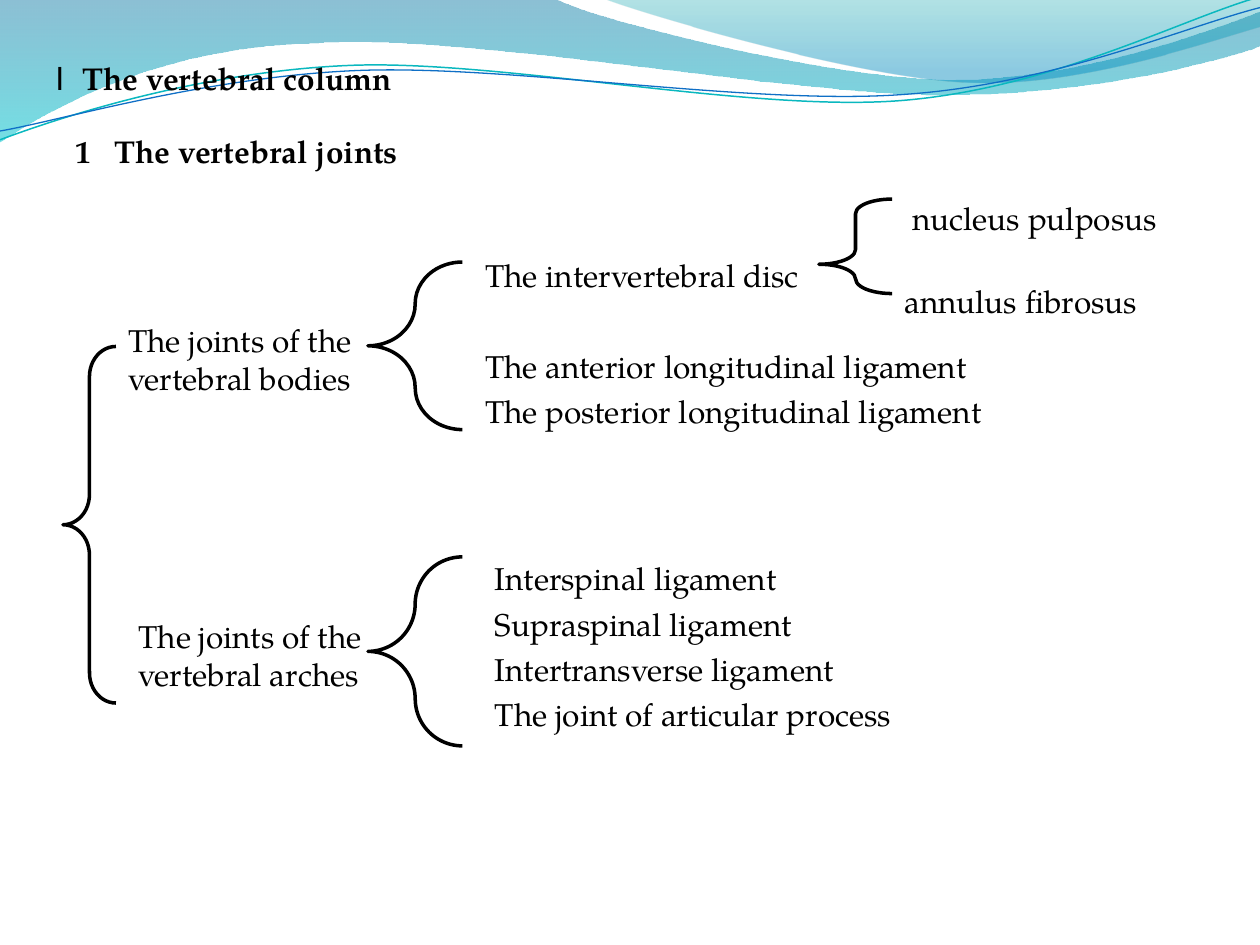
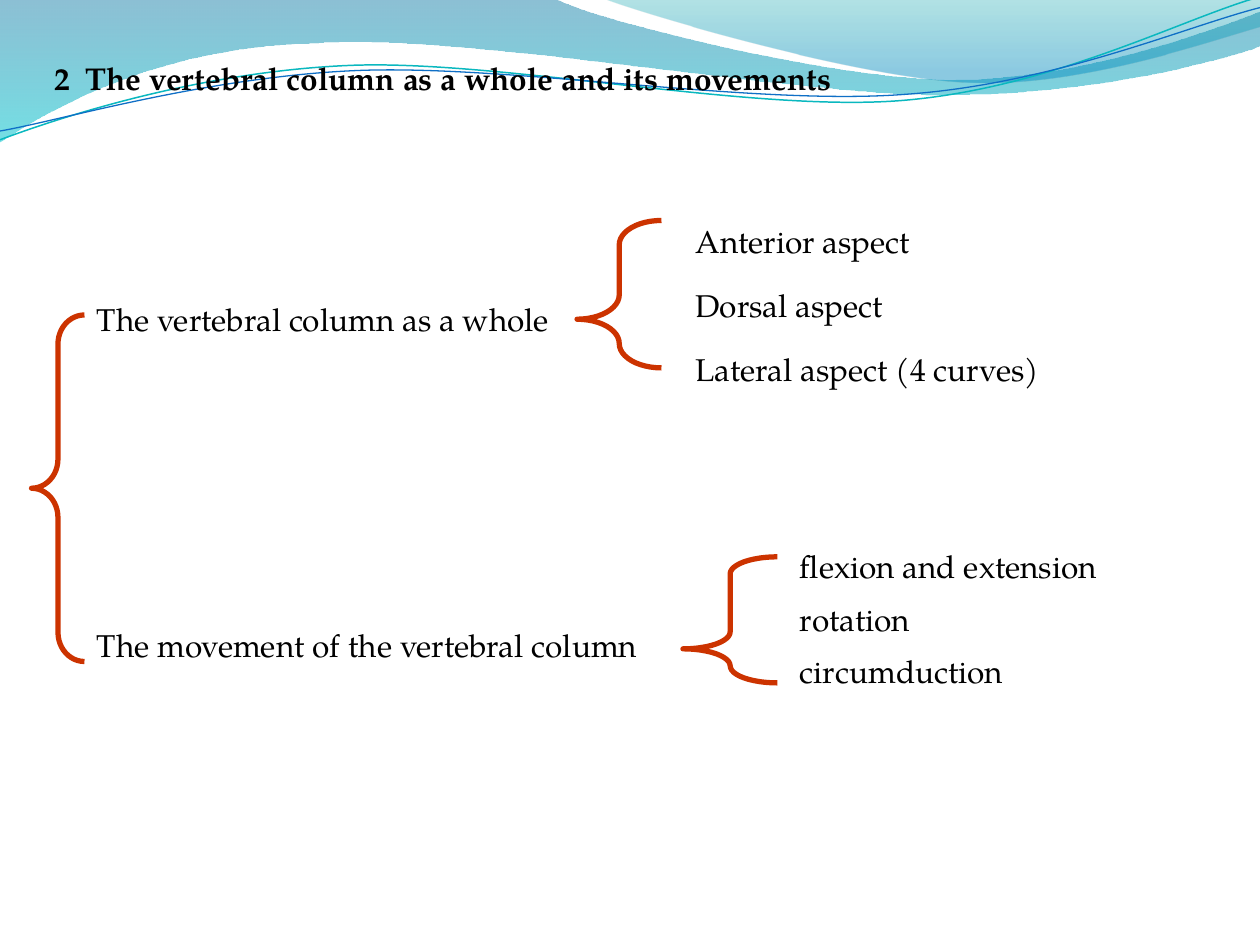
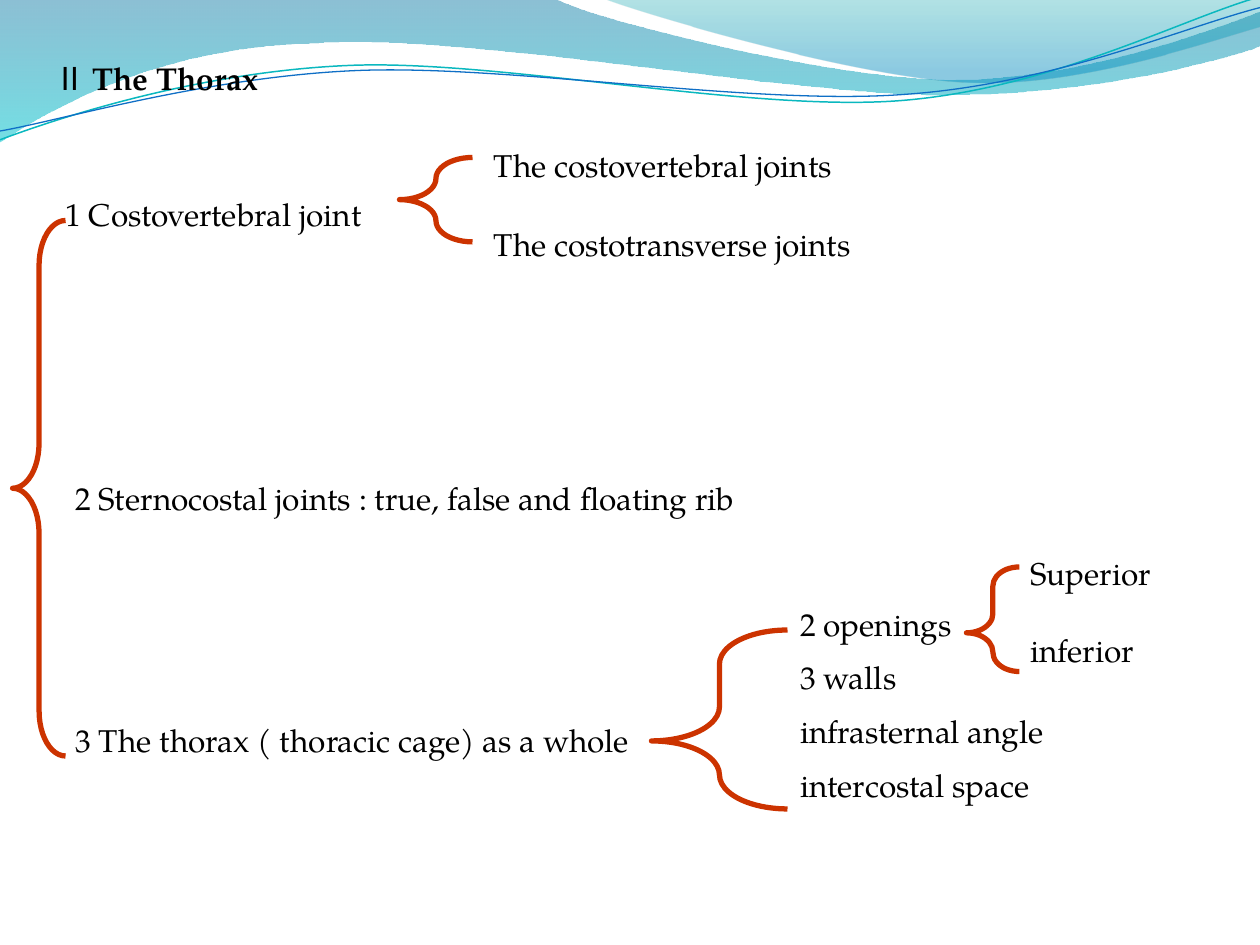
import math

import pptx
import pptx.util
import pptx.dml.color
import pptx.enum.shapes
import pptx.enum.text
import pptx.oxml.ns
from lxml import etree

Inches = pptx.util.Inches
Pt = pptx.util.Pt
RGBColor = pptx.dml.color.RGBColor
qn = pptx.oxml.ns.qn
LEFT = pptx.enum.text.PP_ALIGN.LEFT
JUSTIFY = pptx.enum.text.PP_ALIGN.JUSTIFY

BLACK = RGBColor(0x00, 0x00, 0x00)
RED = RGBColor(0xCC, 0x33, 0x00)
DEEP_BLUE = RGBColor(0x00, 0x74, 0xA1)
AQUA = RGBColor(0x00, 0xC6, 0xCF)
TEAL = RGBColor(0x00, 0xA1, 0xA9)
SKY = RGBColor(0x00, 0x8B, 0xBF)
TEAL_LINE = RGBColor(0x0A, 0xB8, 0xBF)
BLUE_LINE = RGBColor(0x0F, 0x6F, 0xC6)
SERIF = "TeX Gyre Pagella"
CJK = "Noto Sans CJK SC"
LINE_TILT = 2.7

# Waves at the top: frame, outline, then gradient stops (position, colour, alpha) or a line.
# Six numbers are a Bezier curve, two are a straight line.
WAVES = [
    dict(at=(-0.01, -0.01, 10.02, 1.14), start=(0, 0), segments=[
        (4.4, -0.01), (4.76, 0.17, 6.64, 0.63, 7.58, 0.63),
        (8.53, 0.63, 9.58, 0.26, 10, 0.09), (10.01, 0.36),
        (9.83, 0.44, 8.7, 0.76, 7.46, 0.75), (6.22, 0.75, 3.82, 0.28, 2.57, 0.34),
        (1.29, 0.36, 0.46, 0.83, -0.01, 1.13), (0, 0)],
        stops=[(0, DEEP_BLUE, 45), (1, AQUA, 55)]),
    dict(at=(4.79, -0.01, 5.21, 0.7), start=(4.79, -0.01), segments=[
        (5.09, 0.11, 6.82, 0.62, 7.69, 0.65), (8.56, 0.69, 9.61, 0.32, 10, 0.21),
        (10, 0), (4.79, -0.01)],
        stops=[(0, TEAL, 30), (0.8, SKY, 45)]),
    dict(at=(-0.02, 0.22, 10.02, 0.71), start=(0, 1.11), segments=[
        (0.48, 0.93, 1.58, 0.57, 2.77, 0.52), (3.95, 0.47, 5.93, 0.89, 7.13, 0.8),
        (8.33, 0.71, 9.38, 0.15, 9.98, -0.02)],
        line=(TEAL_LINE, 0.85)),
    dict(at=(-0.02, 0.3, 10.03, 0.58), start=(0, 1.04), segments=[
        (0.47, 0.96, 1.64, 0.61, 2.83, 0.56), (4.03, 0.51, 5.97, 0.84, 7.17, 0.75),
        (8.36, 0.67, 9.41, 0.21, 10, 0.06)],
        line=(BLUE_LINE, 0.75)),
]

# The first text of each slide goes in the body placeholder.
# Braces are (left, top, width, height), curl, position of the point.
SLIDES = [
    dict(title=("Ⅰ ", "The vertebral column"), title_at=(0.25, 0.42, 6.33, 0.5),
         brace_line=(BLACK, 2),
         texts=[
             dict(at=(3.75, 1.92, 5.08, 2.5), spacing=1.2, gaps=(0, 26, 0),
                  lines=["The intervertebral disc",
                         "The anterior longitudinal ligament ",
                         "The posterior longitudinal ligament "]),
             dict(at=(0.5, 1, 3.83, 0.5), bold=True, lines=["1   The vertebral joints"]),
             dict(at=(0.92, 2.5, 2.83, 0.9),
                  lines=["The joints of the", "vertebral bodies"]),
             dict(at=(1, 4.85, 2.75, 0.9),
                  lines=["The joints of the", "vertebral arches"]),
             dict(at=(7.08, 1.17, 2.67, 1.86), spacing=2.2,
                  lines=[" nucleus pulposus annulus fibrosus"]),
             dict(at=(3.83, 4.33, 5, 2.02), spacing=1.2,
                  lines=["Interspinal ligament ", "Supraspinal ligament",
                         "Intertransverse ligament",
                         "The joint of articular process"]),
         ],
         braces=[((2.92, 2.08, 0.75, 1.33), 0.44, 0.5),
                 ((6.5, 1.58, 0.58, 0.75), 0.32, 0.69),
                 ((2.92, 4.42, 0.75, 1.5), 0.5, 0.5),
                 ((0.5, 2.75, 0.42, 2.83), 0.57, 0.5)]),
    dict(title=("", "2  The vertebral column as a whole and its movements"),
         title_at=(0.33, 0.42, 9.5, 0.5), brace_line=(RED, 3),
         texts=[
             dict(at=(5.42, 1.5, 3.92, 2.14), spacing=1.7, align=JUSTIFY,
                  lines=["Anterior aspect ", "Dorsal aspect ",
                         "Lateral aspect (4 curves)"]),
             dict(at=(0.67, 2.33, 5.08, 0.5), lines=["The vertebral column as a whole"]),
             dict(at=(0.67, 4.92, 6.67, 0.5),
                  lines=["The movement of the vertebral column"]),
             dict(at=(6.25, 4.17, 3.08, 1.78), spacing=1.4,
                  lines=["flexion and extension", "rotation", "circumduction"]),
         ],
         braces=[((4.58, 1.75, 0.67, 1.17), 0.44, 0.67),
                 ((5.42, 4.42, 0.75, 1), 0.44, 0.73),
                 ((0.25, 2.5, 0.42, 2.75), 0.55, 0.5)]),
    dict(title=("Ⅱ ", "The Thorax"), title_at=(0.33, 0.42, 3.83, 0.5),
         brace_line=(RED, 3),
         texts=[
             dict(at=(6.25, 4.75, 2.83, 2.3), gaps=(0, 9, 9, 9),
                  lines=["2 openings", "3 walls", "infrasternal angle",
                         "intercostal space"]),
             dict(at=(0.42, 1.5, 3.67, 0.5), lines=["1 Costovertebral joint"]),
             dict(at=(3.67, 0.78, 5.58, 1.78), spacing=2.1, indent=0.15, align=JUSTIFY,
                  lines=["The costovertebral joints ", "The costotransverse joints "]),
             dict(at=(0.5, 3.75, 7.67, 0.5),
                  lines=["2 Sternocostal joints : true, false and floating rib"]),
             dict(at=(0.5, 5.67, 5.67, 0.5),
                  lines=["3 The thorax ( thoracic cage) as a whole"]),
             dict(at=(8.08, 4.17, 1.83, 1.58), spacing=1.6, gaps=(0, 9),
                  lines=["Superior", "inferior"]),
         ],
         braces=[((0.1, 1.75, 0.42, 4.25), 0.85, 0.5),
                 ((3.17, 1.25, 0.58, 0.67), 0.36, 0.5),
                 ((5.17, 5, 1.08, 1.42), 0.48, 0.62),
                 ((7.67, 4.5, 0.42, 0.83), 0.36, 0.63)]),
]


def add_run(p, text, font=SERIF, bold=False):
    r = p.add_run()
    r.text = text
    for name, value in dict(name=font, size=Pt(18), bold=bold).items():
        setattr(r.font, name, value)
    r.font.color.rgb = BLACK
    etree.SubElement(r.font._element, qn("a:ea")).set("typeface", font)


def place_text(sp, at):
    sp.left, sp.top, sp.width, sp.height = map(Inches, at)
    tf = sp.text_frame
    frame = dict(word_wrap=True, vertical_anchor=pptx.enum.text.MSO_ANCHOR.TOP,
                 auto_size=pptx.enum.text.MSO_AUTO_SIZE.SHAPE_TO_FIT_TEXT)
    for name, value in frame.items():
        setattr(tf, name, value)
    return tf


prs = pptx.Presentation()
prs.slide_width, prs.slide_height = Inches(10), Inches(7.5)
slides = [prs.slides.add_slide(prs.slide_layouts[1]) for _ in SLIDES]

# Shared waves: drawn once, then moved to the master
master_tree = prs.slide_master.shapes._spTree
for i, wave in enumerate(WAVES):
    left, top, width, height = wave["at"]
    closed = "stops" in wave
    builder = slides[0].shapes.build_freeform(Inches(left), Inches(top))
    builder.add_line_segments([(Inches(left + width), Inches(top)),
                               (Inches(left + width), Inches(top + height))])
    sp = builder.convert_to_shape()
    sp.shadow.inherit = False

    # Curved outline, with the tilt of the lines taken out before they are rotated
    tilt = 0 if closed else math.radians(LINE_TILT)
    cx, cy = left + width / 2, top + height / 2
    outline = sp._element.find(".//" + qn("a:path"))
    for child in list(outline):
        outline.remove(child)
    for k, seg in enumerate([wave["start"]] + wave["segments"]):
        tag = "a:moveTo" if k == 0 else "a:lnTo" if len(seg) == 2 else "a:cubicBezTo"
        command = etree.SubElement(outline, qn(tag))
        for x, y in zip(seg[::2], seg[1::2]):
            dx, dy = x - cx, y - cy
            px = dx * math.cos(tilt) - dy * math.sin(tilt) + width / 2
            py = dx * math.sin(tilt) + dy * math.cos(tilt) + height / 2
            pt = etree.SubElement(command, qn("a:pt"))
            pt.set("x", str(Inches(px)))
            pt.set("y", str(Inches(py)))

    if closed:
        etree.SubElement(outline, qn("a:close"))
        sp.line.fill.background()
        sp.fill.gradient()
        sp.fill.gradient_angle = 270
        for stop, (position, color, alpha) in zip(sp.fill.gradient_stops, wave["stops"]):
            stop.position = position
            stop.color.rgb = color
            clr = stop._gs.find(qn("a:srgbClr"))
            etree.SubElement(clr, qn("a:alpha")).set("val", str(alpha * 1000))
    else:
        sp.rotation = 360 - LINE_TILT
        color, weight = wave["line"]
        sp.fill.background()
        sp.line.color.rgb = color
        sp.line.width = Pt(weight)
    sp._element.nvSpPr.cNvPr.set("id", str(20 + i))
    master_tree.insert(2 + i, sp._element)

for s, content in zip(slides, SLIDES):
    # Title
    p = place_text(s.shapes.title, content["title_at"]).paragraphs[0]
    p.alignment = LEFT
    numeral, title = content["title"]
    if numeral:
        add_run(p, numeral, CJK)
    add_run(p, title, bold=True)

    # Terms and lists
    for i, block in enumerate(content["texts"]):
        sp = s.placeholders[1] if i == 0 else s.shapes.add_textbox(0, 0, 0, 0)
        tf = place_text(sp, block["at"])
        lines = block["lines"]
        for j, (line, gap) in enumerate(zip(lines, block.get("gaps", [0] * len(lines)))):
            p = tf.add_paragraph() if j else tf.paragraphs[0]
            p.alignment = block.get("align", LEFT)
            p.line_spacing = block.get("spacing", 1.0)
            p.space_before = Pt(gap)
            pPr = p._p.get_or_add_pPr()
            pPr.set("marL", "0")
            pPr.set("indent", str(Inches(block.get("indent", 0))))
            etree.SubElement(pPr, qn("a:buNone"))
            add_run(p, line, bold=block.get("bold", False))

    # Braces
    color, weight = content["brace_line"]
    for at, curl, point in content["braces"]:
        sp = s.shapes.add_shape(pptx.enum.shapes.MSO_SHAPE.LEFT_BRACE, *map(Inches, at))
        sp.adjustments[0], sp.adjustments[1] = curl, point
        sp.shadow.inherit = False
        sp.fill.background()
        sp.line.color.rgb = color
        sp.line.width = Pt(weight)

prs.save("out.pptx")
